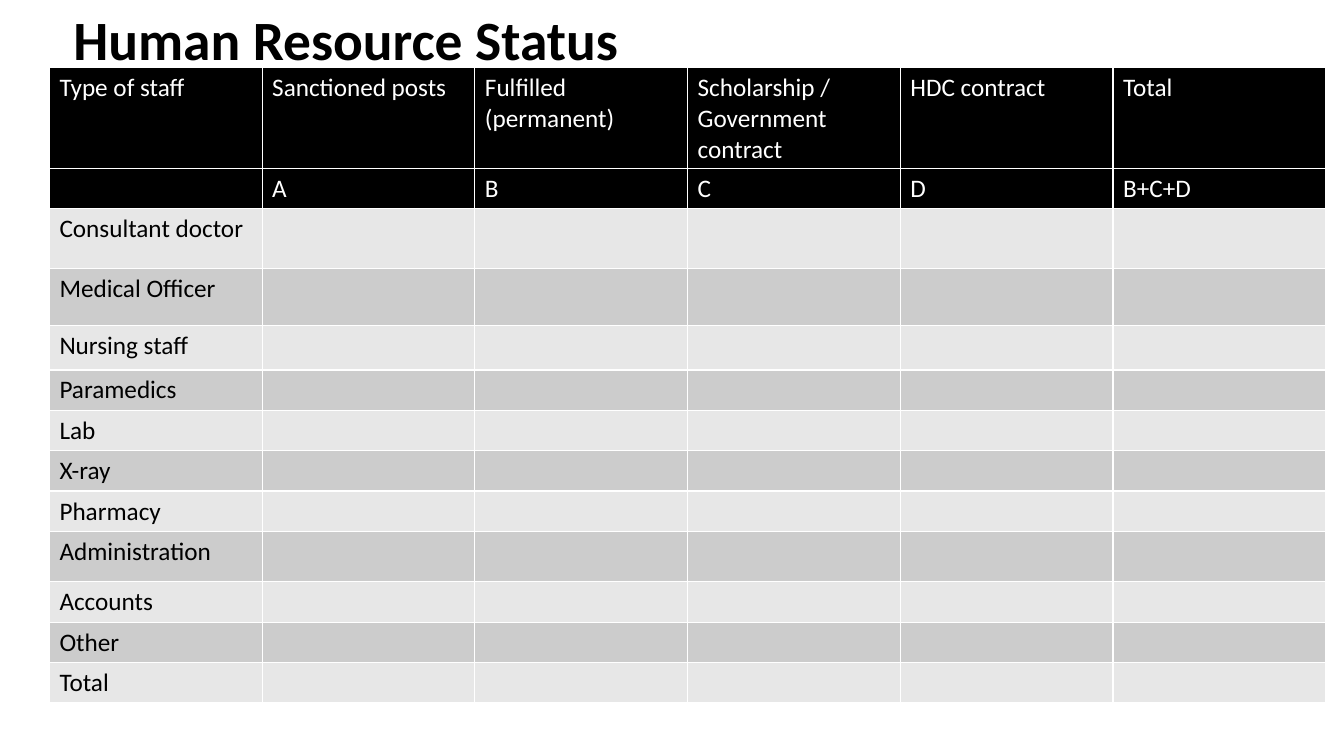
import pptx
import pptx.dml.color
import pptx.enum.text
import pptx.oxml
import pptx.oxml.ns
import pptx.util

TITLE = "Human Resource Status"
HEADINGS = [
    ("Type of staff", "Sanctioned posts", "Fulfilled (permanent)",
     "Scholarship / Government contract", "HDC contract", "Total"),
    ("", "A", "B", "C", "D", "B+C+D"),
]
HEADING_HEIGHTS = [1, 0.4]
STAFF = [
    ("Consultant doctor", 0.59),
    ("Medical Officer", 0.57),
    ("Nursing staff", 0.44),
    ("Paramedics", 0.4),
    ("Lab", 0.4),
    ("X-ray", 0.4),
    ("Pharmacy", 0.4),
    ("Administration", 0.5),
    ("Accounts", 0.4),
    ("Other", 0.4),
    ("Total", 0.4),
]

FONT = "Calibri"
BLACK, WHITE = "000000", "FFFFFF"
BANDS = ["E7E7E7", "CCCCCC"]
SLIDE_WIDTH, SLIDE_HEIGHT = 13.33, 7.5
TABLE_LEFT, TABLE_TOP, TABLE_WIDTH = 0.49, 0.67, 12.66

inches = pptx.util.Inches


def color(hex_value):
    return pptx.dml.color.RGBColor.from_string(hex_value)


def write(frame, text, size=18, ink=BLACK, bold=False, spacing=1.0):
    paragraph = frame.paragraphs[0]
    paragraph.line_spacing = spacing
    paragraph.font.size = pptx.util.Pt(size)
    if text:
        run = paragraph.add_run()
        run.text = text
        run.font.name = FONT
        run.font.size = pptx.util.Pt(size)
        run.font.bold = bold
        run.font.color.rgb = color(ink)


def fill_cell(cell, fill):
    """Fill a cell and rule its four sides with thin white lines."""
    properties = cell._tc.get_or_add_tcPr()
    for side in ("lnL", "lnR", "lnT", "lnB"):
        properties.append(pptx.oxml.parse_xml(
            f'<a:{side} {pptx.oxml.ns.nsdecls("a")} w="12700"><a:solidFill>'
            f'<a:srgbClr val="{WHITE}"/></a:solidFill></a:{side}>'))
    cell.fill.solid()
    cell.fill.fore_color.rgb = color(fill)


def add_title(slide):
    box = slide.shapes.add_textbox(
        inches(0.63), inches(0.17), inches(12.22), inches(0.5))
    frame = box.text_frame
    frame.word_wrap = True
    frame.vertical_anchor = pptx.enum.text.MSO_ANCHOR.MIDDLE
    write(frame, TITLE, size=39.6, bold=True, spacing=0.9)


def add_staff_table(slide):
    column_count = len(HEADINGS[0])
    blanks = ("",) * (column_count - 1)
    rows = HEADINGS + [(name, *blanks) for name, _ in STAFF]
    heights = HEADING_HEIGHTS + [height for _, height in STAFF]
    table = slide.shapes.add_table(
        len(rows), column_count, inches(TABLE_LEFT), inches(TABLE_TOP),
        inches(TABLE_WIDTH), inches(sum(heights))).table
    for column in table.columns:
        column.width = inches(TABLE_WIDTH / column_count)
    for index, (texts, height) in enumerate(zip(rows, heights)):
        table.rows[index].height = inches(height)
        is_heading = index < len(HEADINGS)
        fill = BLACK if is_heading else BANDS[(index - len(HEADINGS)) % 2]
        for cell, text in zip(table.rows[index].cells, texts):
            fill_cell(cell, fill)
            write(cell.text_frame, text, ink=WHITE if is_heading else BLACK)


def main():
    deck = pptx.Presentation()
    deck.slide_width = inches(SLIDE_WIDTH)
    deck.slide_height = inches(SLIDE_HEIGHT)
    slide = deck.slides.add_slide(deck.slide_layouts[6])
    add_title(slide)
    add_staff_table(slide)
    deck.save("out.pptx")


if __name__ == "__main__":
    main()
